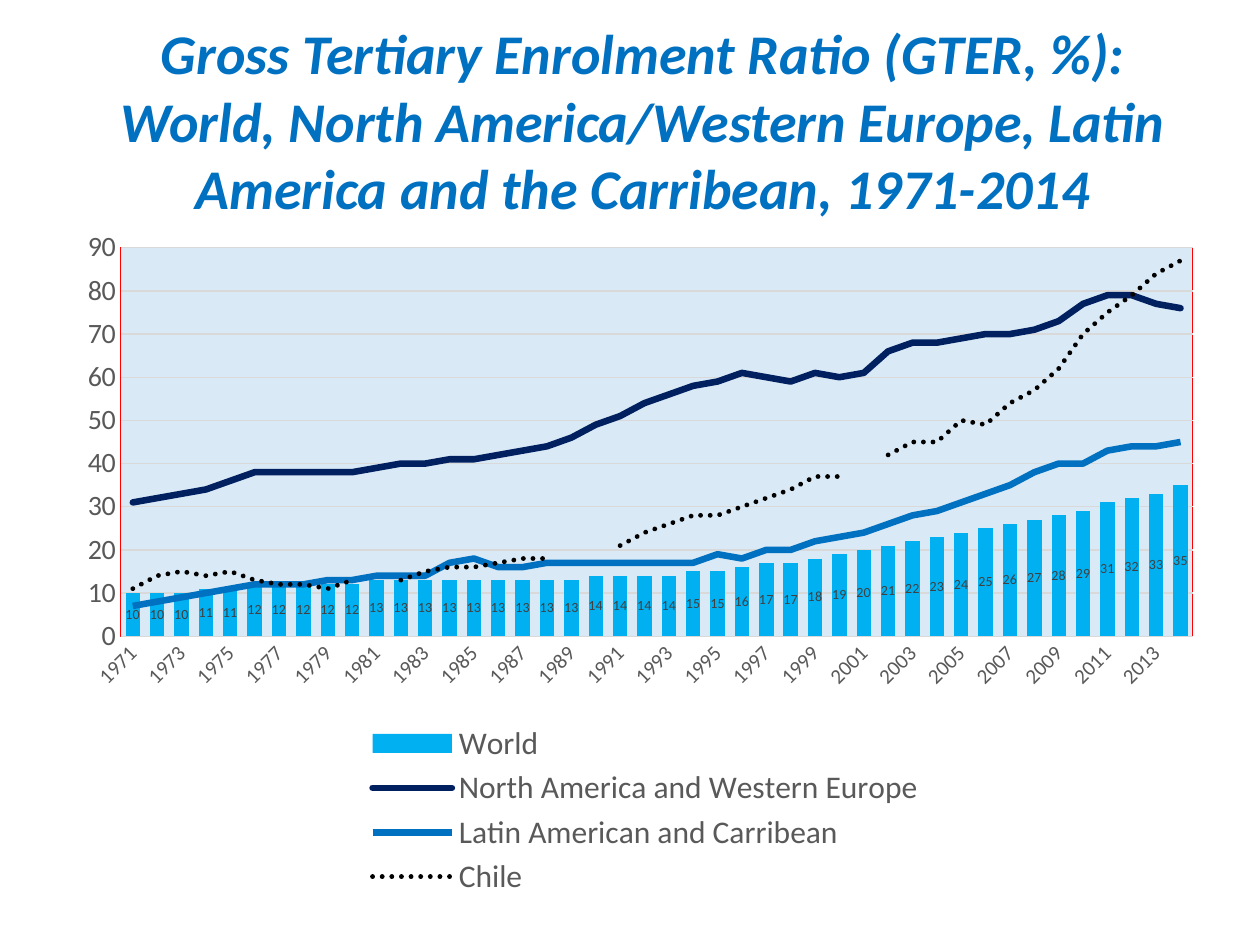
from lxml import etree
from pptx import Presentation
from pptx.chart.data import CategoryChartData
from pptx.dml.color import RGBColor
from pptx.enum.chart import (XL_CHART_TYPE, XL_LABEL_POSITION, XL_LEGEND_POSITION,
                             XL_MARKER_STYLE, XL_TICK_MARK)
from pptx.enum.dml import MSO_LINE
from pptx.enum.text import MSO_ANCHOR, PP_ALIGN
from pptx.oxml import parse_xml
from pptx.oxml.ns import nsdecls, qn
from pptx.util import Inches, Pt

COLUMNS = XL_CHART_TYPE.COLUMN_CLUSTERED
CENTER_LABEL = XL_LABEL_POSITION.CENTER
LEGEND_BOTTOM = XL_LEGEND_POSITION.BOTTOM
NO_MARKER = XL_MARKER_STYLE.NONE
NO_TICK = XL_TICK_MARK.NONE
ROUND_DOT = MSO_LINE.ROUND_DOT
MIDDLE = MSO_ANCHOR.MIDDLE
CENTERED = PP_ALIGN.CENTER

BLUE = RGBColor(0x00, 0x70, 0xC0)
SKY = RGBColor(0x00, 0xB0, 0xF0)
NAVY = RGBColor(0x00, 0x20, 0x60)
BLACK = RGBColor(0x00, 0x00, 0x00)
AXIS_GRAY = RGBColor(0x59, 0x59, 0x59)
LABEL_GRAY = RGBColor(0x40, 0x40, 0x40)
GRID_GRAY = RGBColor(0xD9, 0xD9, 0xD9)
FONT = "Calibri"

ENROLMENT = {
    "World": [
        10, 10, 10, 11, 11, 12, 12, 12, 12, 12, 13, 13, 13, 13, 13, 13, 13, 13, 13, 14, 14, 14,
        14, 15, 15, 16, 17, 17, 18, 19, 20, 21, 22, 23, 24, 25, 26, 27, 28, 29, 31, 32, 33, 35],
    "North America and Western Europe": [
        31, 32, 33, 34, 36, 38, 38, 38, 38, 38, 39, 40, 40, 41, 41, 42, 43, 44, 46, 49, 51, 54,
        56, 58, 59, 61, 60, 59, 61, 60, 61, 66, 68, 68, 69, 70, 70, 71, 73, 77, 79, 79, 77, 76],
    "Latin American and Carribean": [
        7, 8, 9, 10, 11, 12, 12, 12, 13, 13, 14, 14, 14, 17, 18, 16, 16, 17, 17, 17, 17, 17,
        17, 17, 19, 18, 20, 20, 22, 23, 24, 26, 28, 29, 31, 33, 35, 38, 40, 40, 43, 44, 44, 45],
    "Chile": [
        11, 14, 15, 14, 15, 13, 12, 12, 11, 13, None, 13, 15, 16, 16, 17, 18, 18, None, None, 21,
        24, 26, 28, 28, 30, 32, 34, 37, 37, None, 42, 45, 45, 50, 49, 54, 57, 62, 70, 75, 79,
        84, 87],
}


def set_font(font, size, color, **extra):
    for name, value in {"name": FONT, "size": Pt(size), **extra}.items():
        setattr(font, name, value)
    font.color.rgb = color


def make_layout(x, y, width, height, target=""):
    return parse_xml(
        f'<c:layout {nsdecls("c")}><c:manualLayout>{target}'
        f'<c:xMode val="edge"/><c:yMode val="edge"/><c:x val="{x}"/><c:y val="{y}"/>'
        f'<c:w val="{width}"/><c:h val="{height}"/></c:manualLayout></c:layout>')


presentation = Presentation()
presentation.slide_width, presentation.slide_height = Inches(10), Inches(7.5)
slide = presentation.slides.add_slide(presentation.slide_layouts[5])

# Title
title = slide.shapes.title
title.left, title.top, title.width, title.height = map(Inches, (0.56, 0.15, 9.09, 1.6))
title.text_frame.vertical_anchor = MIDDLE
paragraph = title.text_frame.paragraphs[0]
paragraph.alignment = CENTERED
run = paragraph.add_run()
run.text = ("Gross Tertiary Enrolment Ratio (GTER, %): World, North America/Western Europe, "
            "Latin America and the Carribean, 1971-2014")
set_font(run.font, 32, BLUE, bold=True, italic=True)

# Chart with all regions as columns
chart_data = CategoryChartData(number_format="#,##0")
chart_data.categories = [str(year) for year in range(1971, 2015)]
for region, ratios in ENROLMENT.items():
    chart_data.add_series(region, ratios)
chart = slide.shapes.add_chart(
    COLUMNS, Inches(0.5), Inches(1.75), Inches(9.15), Inches(5.41), chart_data).chart
chart.has_title = False
set_font(chart.font, 10, BLACK)

# Move every region but World to a line chart on the same axes
plot_area = chart._chartSpace.chart.plotArea
bar_chart = plot_area.find(qn("c:barChart"))
line_chart = parse_xml(
    f'<c:lineChart {nsdecls("c")}><c:grouping val="standard"/><c:varyColors val="0"/>'
    '<c:marker val="1"/></c:lineChart>')
line_marker = line_chart.find(qn("c:marker"))
for series_xml in bar_chart.findall(qn("c:ser"))[1:]:
    for column_setting in series_xml.findall(qn("c:invertIfNegative")):
        series_xml.remove(column_setting)
    line_marker.addprevious(series_xml)
for axis_id in bar_chart.findall(qn("c:axId")):
    etree.SubElement(line_chart, qn("c:axId")).set("val", axis_id.get("val"))
bar_chart.addnext(line_chart)
columns, lines = chart.plots

# World columns
columns.gap_width, columns.overlap, columns.vary_by_categories = 69, -27, False
world = columns.series[0]
world.format.fill.solid()
world.format.fill.fore_color.rgb = SKY
labels = world.data_labels
label_format = {"show_value": True, "position": CENTER_LABEL,
                "number_format": "#,##0", "number_format_is_linked": False}
for name, value in label_format.items():
    setattr(labels, name, value)
set_font(labels.font, 8, LABEL_GRAY)

# Region lines
line_styles = [(NAVY, 3.75, None, "rnd"), (BLUE, 3.75, None, "flat"),
               (BLACK, 2.75, ROUND_DOT, "rnd")]
for series, (color, width, dash, cap) in zip(lines.series, line_styles):
    series.smooth = False
    series.marker.style = NO_MARKER
    line = series.format.line
    line.color.rgb = color
    line.width = Pt(width)
    line.dash_style = dash
    line._get_or_add_ln().set("cap", cap)

# Axes
years, ratio = chart.category_axis, chart.value_axis
for axis, size in ((years, 12), (ratio, 16)):
    axis.major_tick_mark = axis.minor_tick_mark = NO_TICK
    set_font(axis.tick_labels.font, size, AXIS_GRAY)
ratio.minimum_scale, ratio.maximum_scale, ratio.major_unit = 0, 90, 10
ratio.format.line.fill.background()
for line in (years.format.line, ratio.major_gridlines.format.line):
    line.color.rgb = GRID_GRAY
    line.width = Pt(0.75)
years_xml = plot_area.find(qn("c:catAx"))
years_xml.find(qn("c:txPr")).find(qn("a:bodyPr")).set("rot", "-2700000")
label_skip = parse_xml(f'<c:tickLblSkip {nsdecls("c")} val="2"/>')
years_xml.find(qn("c:noMultiLvlLbl")).addprevious(label_skip)

# Plot area: place, pale blue fill and thin red border
for layout in plot_area.findall(qn("c:layout")):
    plot_area.remove(layout)
plot_area.insert(0, make_layout(0.05, 0.04, 0.93, 0.57, '<c:layoutTarget val="inner"/>'))
plot_area.append(parse_xml(
    f'<c:spPr {nsdecls("c", "a")}><a:solidFill><a:srgbClr val="{BLUE}">'
    '<a:alpha val="15000"/></a:srgbClr></a:solidFill>'
    '<a:ln w="9525"><a:solidFill><a:srgbClr val="FF0000"/></a:solidFill></a:ln></c:spPr>'))

# Legend
chart.has_legend = True
legend = chart.legend
legend.position = LEGEND_BOTTOM
legend.include_in_layout = False
set_font(legend.font, 18, AXIS_GRAY)
legend_xml = legend._element
for layout in legend_xml.findall(qn("c:layout")):
    legend_xml.remove(layout)
legend_layout = make_layout(0.26, 0.73, 0.49, 0.27)
legend_positions = legend_xml.findall(qn("c:legendPos"))
legend_xml.insert(len(legend_positions), legend_layout)

presentation.save("out.pptx")
